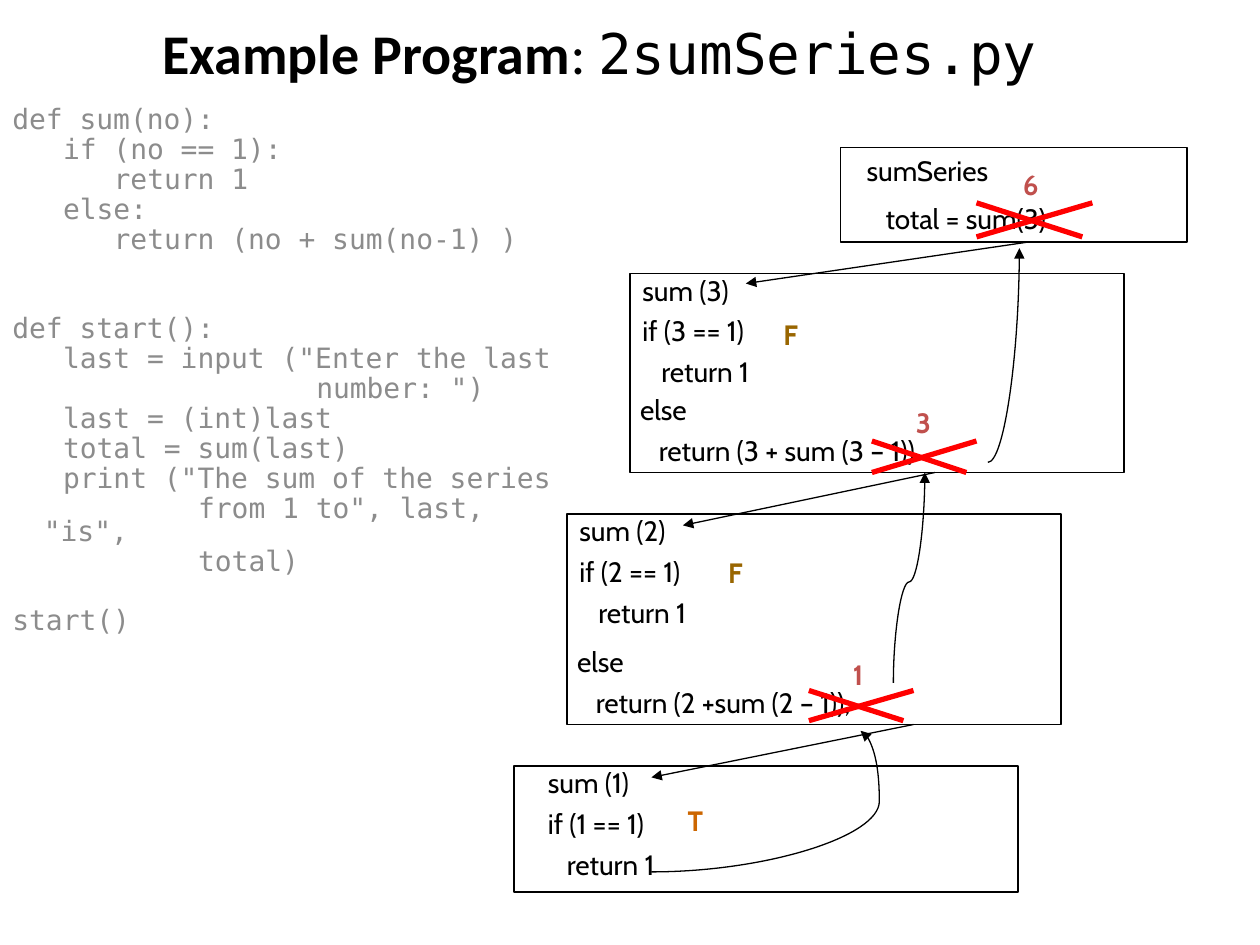
from pptx import Presentation
from pptx.dml.color import RGBColor
from pptx.enum.shapes import MSO_CONNECTOR as LINK, MSO_SHAPE as SHAPE
from pptx.enum.text import MSO_ANCHOR as ANCHOR, PP_ALIGN as ALIGN
from pptx.oxml.ns import qn
from pptx.util import Inches, Pt
from lxml.etree import SubElement

COLORS = {"ink": "000000", "code": "8C8C8C", "false": "996600",
          "true": "CC6600", "value": "C0504D", "cross": "FF0000"}
SANS, MONO, HEADING = "Cabin", "DejaVu Sans Mono", "Calibri"
COLUMN, HANG, CODE_GAP, CODE_PITCH = 0.134, 0.25, 3.7, 16.7

CODE = [
    (0, "def sum(no):", 0),
    (3, "if (no == 1):", 0),
    (6, "return 1", 0),
    (3, "else:", 0),
    (6, "return (no + sum(no-1) )", 0),
    (0, "def start():", 2),
    (3, 'last = input ("Enter the last', 0),
    (18, 'number: ")', 0),
    (3, "last = (int)last", 0),
    (3, "total = sum(last)", 0),
    (3, 'print ("The sum of the series', 0),
    (11, 'from 1 to", last, "is",', 0),
    (11, "total)", 0),
    (0, "start()", 1),
]
CALLS = [
    (3, 5, 2.17, 1.58, 3.17, "return (3 + sum (3 – 1))"),
    (2, 4.5, 4.08, 1.67, 5.17, "return (2 +sum (2 – 1));"),
]
MARKS = [("F", 6.12, 2.47, "false"), ("F", 5.68, 4.36, "false"),
         ("T", 5.36, 6.33, "true"), ("1", 6.67, 5.17, "value"),
         ("3", 7.17, 3.17, "value"), ("6", 8.02, 1.28, "value")]
CROSSES = [(6.42, 5.48, 0.83, 0.24), (6.92, 3.5, 0.83, 0.25),
           (7.75, 1.61, 0.92, 0.27)]
ARROWS = [(8.17, 1.92, 5.92, 2.25), (7.42, 3.75, 5.42, 4.17),
          (7.25, 5.75, 5.17, 6.17)]


class Sketch:
    """Draws the elements of a call-trace slide in one style."""

    def __init__(self, deck):
        self.page = deck.slides.add_slide(deck.slide_layouts[5])

    def style(self, span, font=SANS, color="ink", size=16, bold=False):
        span.font.name = font
        span.font.size = Pt(size)
        span.font.bold = bold
        span.font.color.rgb = RGBColor.from_string(COLORS[color])

    def title(self, parts):
        box = self.page.shapes.title
        box.left, box.top = Inches(0.5), Inches(0)
        box.width, box.height = Inches(8.52), Inches(0.83)
        box.text_frame.vertical_anchor = ANCHOR.MIDDLE
        para = box.text_frame.paragraphs[0]
        para.alignment = ALIGN.CENTER
        for text, font, bold in parts:
            span = para.add_run()
            span.text = text
            self.style(span, font, size=32, bold=bold)

    def text(self, lines, left, top, width, height, inset=True, wrap=True, **look):
        box = self.page.shapes.add_textbox(
            Inches(left), Inches(top), Inches(width), Inches(height))
        frame = box.text_frame
        frame.word_wrap = wrap
        if not inset:
            frame.margin_left = frame.margin_right = 0
            frame.margin_top = frame.margin_bottom = 0
        frame.text = "\n".join(lines)
        for para in frame.paragraphs:
            para.alignment = ALIGN.LEFT
            self.style(para.runs[0], **look)
        return frame.paragraphs

    def steps(self, lines, left, top, width, height, spacing=0.8, inset=True):
        paras = self.text(lines, left, top, width, height, inset)
        for para in paras:
            para.line_spacing = spacing
            para.space_before = Pt(8)
        self.indent(paras[-1], 0.15, 0)

    def code(self, rows, left, top, width, height):
        paras = self.text([text for _, text, _ in rows], left, top, width, height,
                          font=MONO, color="code")
        for para, (column, _, blanks) in zip(paras, rows):
            para.line_spacing = 0.7
            para.space_before = Pt(CODE_GAP + blanks * CODE_PITCH)
            self.indent(para, HANG, column * COLUMN - HANG)

    def indent(self, para, margin, first):
        properties = para._p.get_or_add_pPr()
        properties.set("marL", str(Inches(margin)))
        properties.set("indent", str(Inches(first)))

    def mark(self, text, left, top, color):
        self.text([text], left, top, 0.34, 0.37, wrap=False, color=color, bold=True)

    def frame(self, left, top, width, height):
        box = self.page.shapes.add_shape(
            SHAPE.RECTANGLE, Inches(left), Inches(top), Inches(width), Inches(height))
        box.shadow.inherit = False
        box.fill.background()
        box.line.color.rgb = RGBColor.from_string(COLORS["ink"])
        box.line.width = Pt(0.75)

    def line(self, x1, y1, x2, y2, color="ink", width=0.75, head=True,
             kind=LINK.STRAIGHT):
        link = self.page.shapes.add_connector(
            kind, Inches(x1), Inches(y1), Inches(x2), Inches(y2))
        link.line.color.rgb = RGBColor.from_string(COLORS[color])
        link.line.width = Pt(width)
        if head:
            SubElement(link.line._get_or_add_ln(), qn("a:tailEnd"), type="triangle")
        SubElement(link._element.spPr, qn("a:effectLst"))
        return link

    def curve(self, x1, y1, x2, y2, preset="curvedConnector3", bend=None, turn=0):
        properties = self.line(x1, y1, x2, y2, kind=LINK.CURVE)._element.spPr
        shape = properties.find(qn("a:prstGeom"))
        shape.set("prst", preset)
        if bend is not None:
            SubElement(shape.find(qn("a:avLst")), qn("a:gd"),
                       name="adj1", fmla=f"val {round(bend * 100000)}")
        if turn:
            properties.find(qn("a:xfrm")).set("rot", str(turn * 60000))

    def cross(self, left, top, width, height):
        right, bottom = left + width, top + height
        self.line(left, bottom, right, top, "cross", 3, False)
        self.line(left, top, right - 0.08, bottom, "cross", 3, False)


def call_lines(number):
    return [f"sum ({number})", f"if ({number} == 1)", "return 1"]


def main():
    deck = Presentation()
    deck.slide_width, deck.slide_height = Inches(10), Inches(7.5)
    sketch = Sketch(deck)
    sketch.title([("Example Program", HEADING, True), (": ", HEADING, False),
                  ("2sumSeries.py", MONO, False)])
    sketch.code(CODE, 0, 0.83, 4.58, 6.08)

    sketch.frame(6.67, 1.17, 2.75, 0.75)
    sketch.steps(["sumSeries", "total = sum(3)"], 6.78, 1.17, 2.64, 0.77, spacing=1)
    for number, left, top, height, else_top, result in CALLS:
        sketch.frame(left, top, 3.92, height)
        sketch.steps(call_lines(number), left, top, 4.08, 1.01)
        sketch.steps(["else", result], left + 0.08, else_top, 4, 0.56, inset=False)
    sketch.frame(4.08, 6.08, 4, 1)
    sketch.steps(call_lines(1), 4.25, 6.08, 4.08, 1.01)

    for arrow in ARROWS:
        sketch.line(*arrow)
    for mark in MARKS:
        sketch.mark(*mark)
    for cross in CROSSES:
        sketch.cross(*cross)
    sketch.curve(5.17, 6.92, 6.83, 5.8, bend=1.09)
    sketch.curve(6.38, 4.46, 8.05, 4.71, bend=0.48, turn=270)
    sketch.curve(7.84, 3.67, 8.09, 1.97, preset="curvedConnector2")
    deck.save("out.pptx")


if __name__ == "__main__":
    main()
